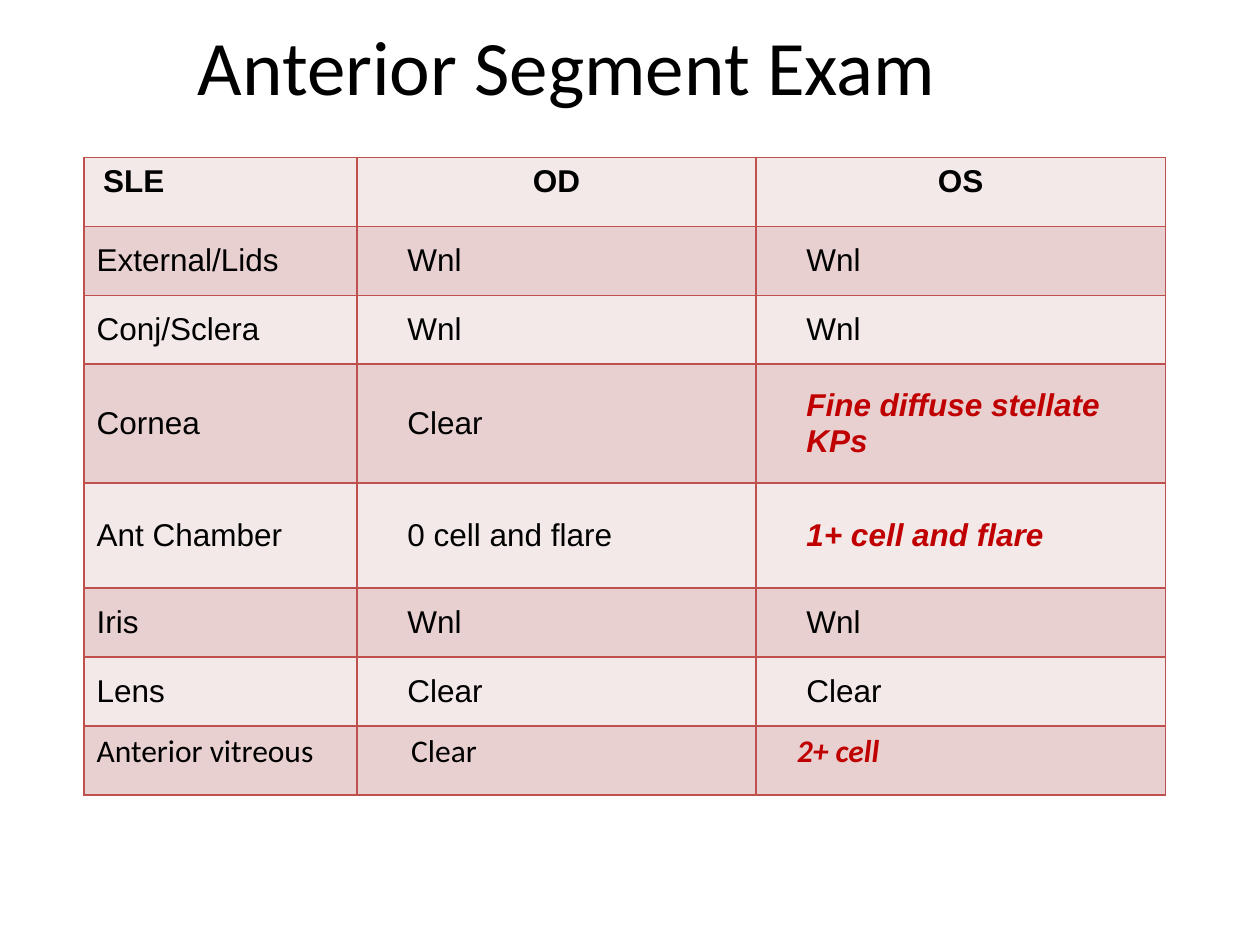
from lxml.etree import SubElement
from pptx import Presentation
from pptx.dml.color import RGBColor
from pptx.enum.text import MSO_ANCHOR, PP_ALIGN
from pptx.oxml.ns import qn
from pptx.util import Pt

COLORS = {
    "text": "000000",
    "finding": "C00000",
    "border": "C0504D",
    "light": "F4E9E9",
    "dark": "E8D0D0",
}
HEADERS = ["SLE", "OD", "OS"]
FINDINGS = [
    ("External/Lids", "Wnl", "Wnl"),
    ("Conj/Sclera", "Wnl", "Wnl"),
    ("Cornea", "Clear", "Fine diffuse stellate KPs"),
    ("Ant Chamber", "0 cell and flare", "1+ cell and flare"),
    ("Iris", "Wnl", "Wnl"),
    ("Lens", "Clear", "Clear"),
    ("Anterior vitreous", "Clear", "2+ cell"),
]
ABNORMAL = {"Fine diffuse stellate KPs", "1+ cell and flare", "2+ cell"}
COLUMN_WIDTHS = [156, 228, 234]
ROW_HEIGHTS = [39.4, 39.4, 39.4, 68, 60, 39.4, 39.4, 39.4]
HEADER_INDENTS = [11, 7.2, 7.2]
EYE_INDENTS = [7.2, 28.8, 28.8]
VITREOUS_INDENTS = [7.2, 31, 23.4]


def write_text(text_frame, text, *, size=18, font="Arial", color="text",
               bold=False, italic=False, align=PP_ALIGN.LEFT):
    paragraph = text_frame.paragraphs[0]
    paragraph.alignment = align
    run = paragraph.add_run()
    run.text = text
    run.font.size = Pt(size)
    run.font.name = font
    run.font.bold = bold
    run.font.italic = italic
    run.font.color.rgb = RGBColor.from_string(COLORS[color])


def format_cell(cell, fill, indent, anchor):
    cell.margin_left = Pt(indent)
    cell.vertical_anchor = anchor
    properties = cell._tc.get_or_add_tcPr()
    for side in ("a:lnL", "a:lnR", "a:lnT", "a:lnB"):
        line = SubElement(properties, qn(side), w=str(Pt(1)))
        solid = SubElement(line, qn("a:solidFill"))
        SubElement(solid, qn("a:srgbClr"), val=COLORS["border"])
    cell.fill.solid()
    cell.fill.fore_color.rgb = RGBColor.from_string(COLORS[fill])


def add_title(slide, text):
    title = slide.shapes.title
    title.left, title.top, title.width, title.height = Pt(0), Pt(-8), Pt(648), Pt(90)
    title.text_frame.vertical_anchor = MSO_ANCHOR.MIDDLE
    write_text(title.text_frame, text, size=44, font="Calibri", align=PP_ALIGN.CENTER)


def add_exam_table(slide):
    table = slide.shapes.add_table(
        len(ROW_HEIGHTS), len(COLUMN_WIDTHS), Pt(48), Pt(90),
        Pt(sum(COLUMN_WIDTHS)), Pt(sum(ROW_HEIGHTS))).table
    for column, width in zip(table.columns, COLUMN_WIDTHS):
        column.width = Pt(width)
    for row, height in zip(table.rows, ROW_HEIGHTS):
        row.height = Pt(height)

    for column, text in enumerate(HEADERS):
        cell = table.cell(0, column)
        format_cell(cell, "light", HEADER_INDENTS[column], MSO_ANCHOR.TOP)
        write_text(cell.text_frame, text, bold=True,
                   align=PP_ALIGN.CENTER if column else PP_ALIGN.LEFT)

    for row, values in enumerate(FINDINGS, start=1):
        is_vitreous = row == len(FINDINGS)
        indents = VITREOUS_INDENTS if is_vitreous else EYE_INDENTS
        anchor = MSO_ANCHOR.TOP if is_vitreous else MSO_ANCHOR.MIDDLE
        for column, text in enumerate(values):
            cell = table.cell(row, column)
            abnormal = text in ABNORMAL
            format_cell(cell, "dark" if row % 2 else "light", indents[column], anchor)
            write_text(cell.text_frame, text, bold=abnormal, italic=abnormal,
                       font="Calibri" if is_vitreous else "Arial",
                       color="finding" if abnormal else "text")


def main():
    presentation = Presentation()
    presentation.slide_width, presentation.slide_height = Pt(720), Pt(540)
    slide = presentation.slides.add_slide(presentation.slide_layouts[5])
    add_title(slide, "Anterior Segment Exam")
    add_exam_table(slide)
    presentation.save("out.pptx")


if __name__ == "__main__":
    main()
